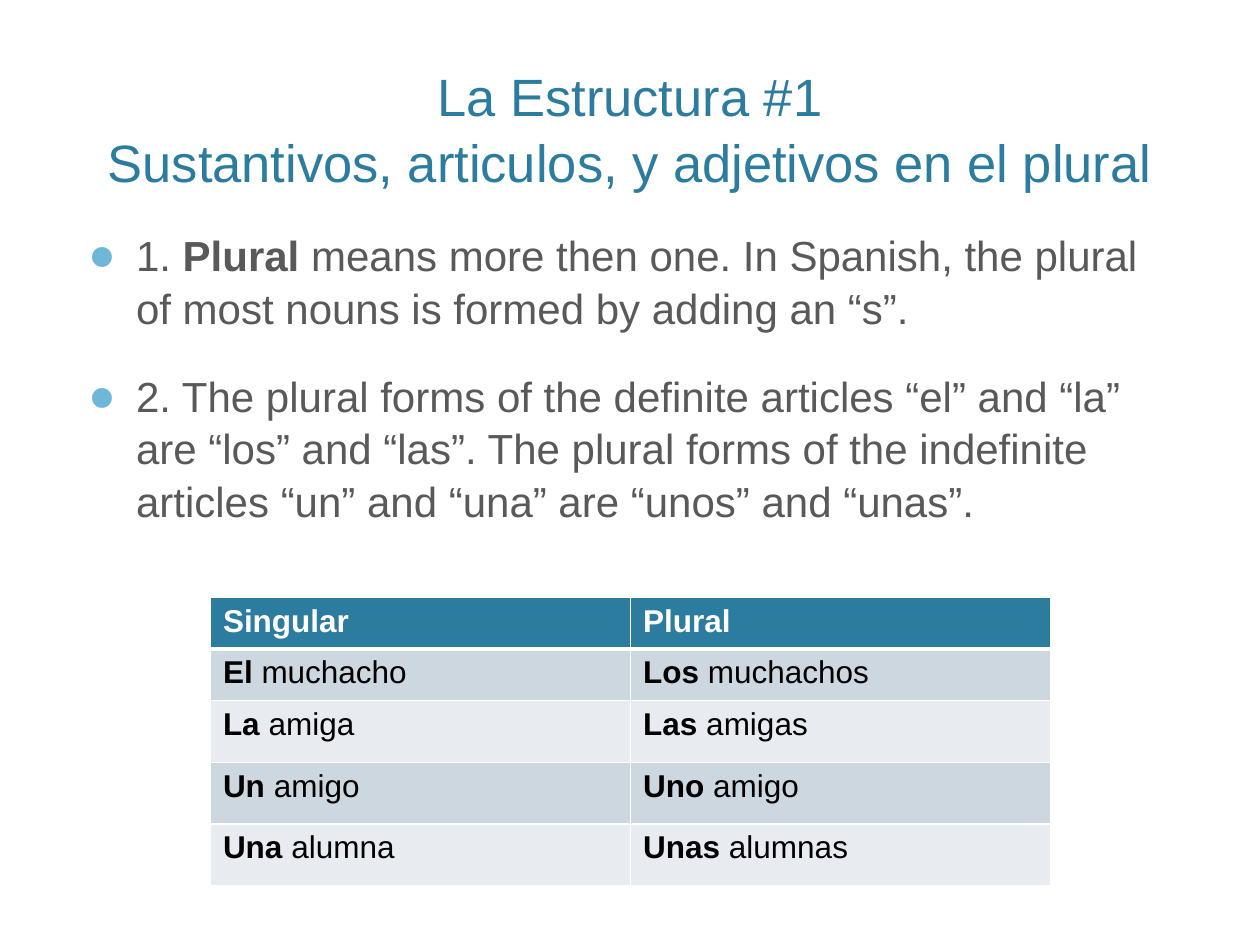
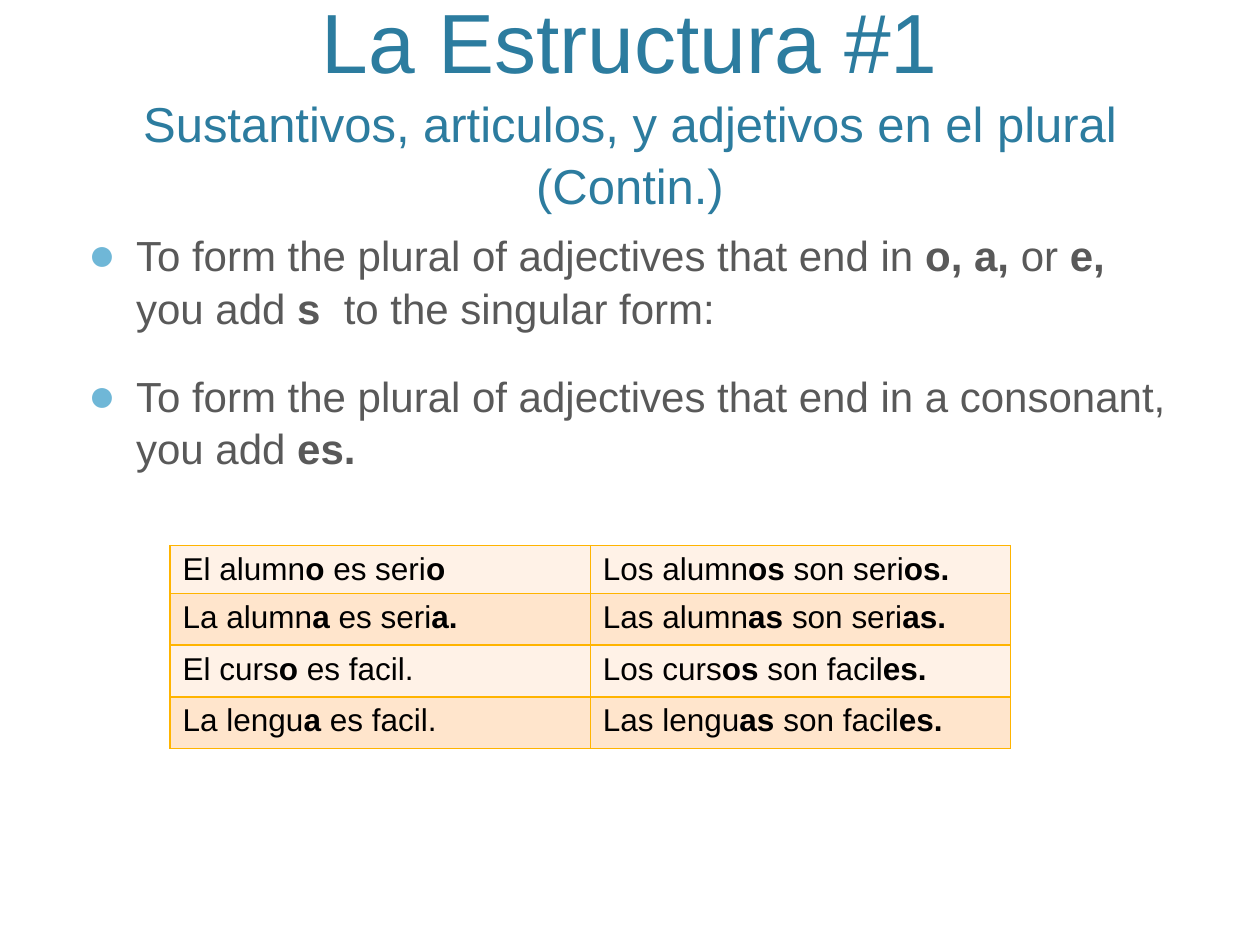
import copy

import lxml.etree
import pptx
import pptx.dml.color
import pptx.enum.text
import pptx.oxml
import pptx.oxml.ns
import pptx.util
from pptx.util import Inches


def color(hex_string):
    return pptx.dml.color.RGBColor.from_string(hex_string)


def add_xml(parent, tag, **attributes):
    element = lxml.etree.SubElement(parent, pptx.oxml.ns.qn(tag))
    for name, value in attributes.items():
        element.set(name, str(value))
    return element


class Lesson:
    FONT = "Arial"
    TITLE = "2C7C9F"
    BODY = "595959"
    BULLET = "6FB7D7"
    BLACK = "000000"
    WHITE = "FFFFFF"
    LINE_SPACING = 1.05
    LEFT, WIDTH = 0.6, 8.8
    COLUMN_WIDTH = 3.335

    def __init__(self):
        self.presentation = pptx.Presentation()
        self.presentation.slide_width = Inches(10)
        self.presentation.slide_height = Inches(7.5)
        self.slide = None

    def new_slide(self):
        layout = self.presentation.slide_layouts[1]
        self.slide = self.presentation.slides.add_slide(layout)

    def format_run(self, run, size, hex_string, bold=False):
        run.font.name = self.FONT
        run.font.size = pptx.util.Pt(size)
        run.font.bold = bold
        run.font.color.rgb = color(hex_string)

    def add_text(self, paragraph, text, size, hex_string):
        """Fill a paragraph; text between ** marks is bold."""
        for index, part in enumerate(text.split("**")):
            if part:
                run = paragraph.add_run()
                run.text = part
                self.format_run(run, size, hex_string, bold=index % 2 == 1)

    def place(self, shape, top, height, anchor):
        shape.left, shape.top = Inches(self.LEFT), Inches(top)
        shape.width, shape.height = Inches(self.WIDTH), Inches(height)
        frame = shape.text_frame
        frame.word_wrap = True
        frame.auto_size = pptx.enum.text.MSO_AUTO_SIZE.NONE
        frame.vertical_anchor = anchor
        return frame

    def title(self, top, lines, sizes):
        frame = self.place(self.slide.shapes.title, top, 1.46,
                           pptx.enum.text.MSO_ANCHOR.BOTTOM)
        frame.text = "\v".join(lines)
        paragraph = frame.paragraphs[0]
        paragraph.alignment = pptx.enum.text.PP_ALIGN.CENTER
        paragraph.line_spacing = self.LINE_SPACING
        for run, size in zip(paragraph.runs, sizes):
            self.format_run(run, size, self.TITLE)
        # The line break takes the size of the line it ends
        for line_break in paragraph._p.findall(pptx.oxml.ns.qn("a:br")):
            line_break.append(copy.deepcopy(paragraph.runs[0]._r.rPr))

    def bullets(self, items):
        frame = self.place(self.slide.placeholders[1], 1.75, 4.75,
                           pptx.enum.text.MSO_ANCHOR.TOP)
        for index, item in enumerate(items):
            paragraph = frame.add_paragraph() if index else frame.paragraphs[0]
            paragraph.line_spacing = self.LINE_SPACING
            paragraph.space_before = pptx.util.Pt(20)
            self.add_text(paragraph, item, 24, self.BODY)
            properties = paragraph._p.get_or_add_pPr()
            properties.set("marL", str(Inches(0.38)))
            properties.set("indent", str(Inches(-0.38)))
            bullet_color = add_xml(properties, "a:buClr")
            add_xml(bullet_color, "a:srgbClr", val=self.BULLET)
            add_xml(properties, "a:buSzPct", val=110000)
            add_xml(properties, "a:buFont", typeface=self.FONT)
            add_xml(properties, "a:buChar", char="●")

    def borders(self, cell, hex_string, top=1, bottom=1):
        properties = cell._tc.get_or_add_tcPr()
        for side, width in (("L", 1), ("R", 1), ("T", top), ("B", bottom)):
            line = add_xml(properties, "a:ln" + side, w=pptx.util.Pt(width))
            fill = add_xml(line, "a:solidFill")
            add_xml(fill, "a:srgbClr", val=hex_string)

    def table(self, left, top, rows, heights, bands, border, header=False):
        columns = len(rows[0])
        table = self.slide.shapes.add_table(
            len(rows), columns, Inches(left), Inches(top),
            Inches(columns * self.COLUMN_WIDTH), Inches(sum(heights))).table
        table.first_row = header
        table.horz_banding = False
        for column in table.columns:
            column.width = Inches(self.COLUMN_WIDTH)
        for row_index, texts in enumerate(rows):
            table.rows[row_index].height = Inches(heights[row_index])
            is_header = header and row_index == 0
            below_header = header and row_index == 1
            band = bands[(row_index - header) % 2]
            for column_index, text in enumerate(texts):
                cell = table.cell(row_index, column_index)
                self.borders(cell, border, top=3 if below_header else 1,
                             bottom=3 if is_header else 1)
                cell.fill.solid()
                cell.fill.fore_color.rgb = color(self.TITLE if is_header else band)
                self.add_text(cell.text_frame.paragraphs[0], text, 18,
                              self.WHITE if is_header else self.BLACK)


def main():
    lesson = Lesson()

    # Plural of nouns and articles
    lesson.new_slide()
    lesson.title(0.12, ["La Estructura #1",
                        "Sustantivos, articulos, y adjetivos en el plural"], [30, 30])
    lesson.bullets([
        "1. **Plural** means more then one. In Spanish, the plural of most nouns "
        "is formed by adding an “s”.",
        "2. The plural forms of the definite articles “el” and “la” are “los” and "
        "“las”. The plural forms of the indefinite articles “un” and “una” are "
        "“unos” and “unas”.",
    ])
    lesson.table(1.67, 4.74, [
        ("**Singular**", "**Plural**"),
        ("**El **muchacho", "**Los **muchachos"),
        ("**La **amiga", "**Las **amigas"),
        ("**Un **amigo", "**Uno** amigo"),
        ("**Una **alumna", "**Unas **alumnas"),
    ], [0.41, 0.41, 0.49, 0.49, 0.49], ("CDD7DF", "E8ECF0"), lesson.WHITE, header=True)

    # Plural of adjectives
    lesson.new_slide()
    lesson.title(0.29, ["La Estructura #1",
                        "Sustantivos, articulos, y adjetivos en el plural (Contin.)"],
                 [48, 28])
    lesson.bullets([
        "To form the plural of adjectives that end in **o, a, **or **e, **you add "
        "**s ** to the singular form:",
        "To form the plural of adjectives that end in a consonant, you add **es.**",
    ])
    lesson.table(1.35, 4.33, [
        ("El alumn**o **es seri**o**", "Los alumn**os **son seri**os.**"),
        ("La alumn**a **es seri**a.**", "Las alumn**as **son seri**as.**"),
        ("El curs**o **es facil.", "Los curs**os **son facil**es.**"),
        ("La lengu**a **es facil.", "Las lengu**as **son facil**es.**"),
    ], [0.38, 0.41, 0.41, 0.41], ("FFF2E7", "FFE5CC"), "FFB400")

    lesson.presentation.save("out.pptx")


if __name__ == "__main__":
    main()
